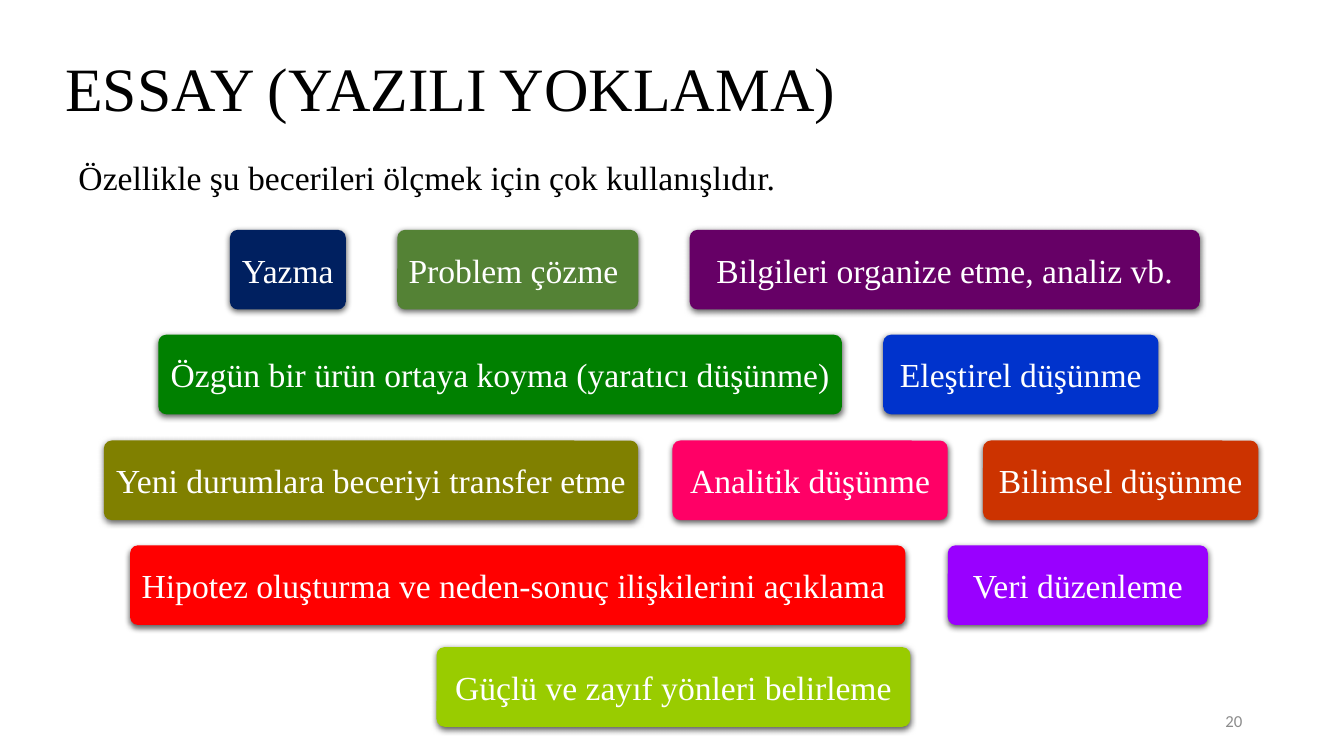
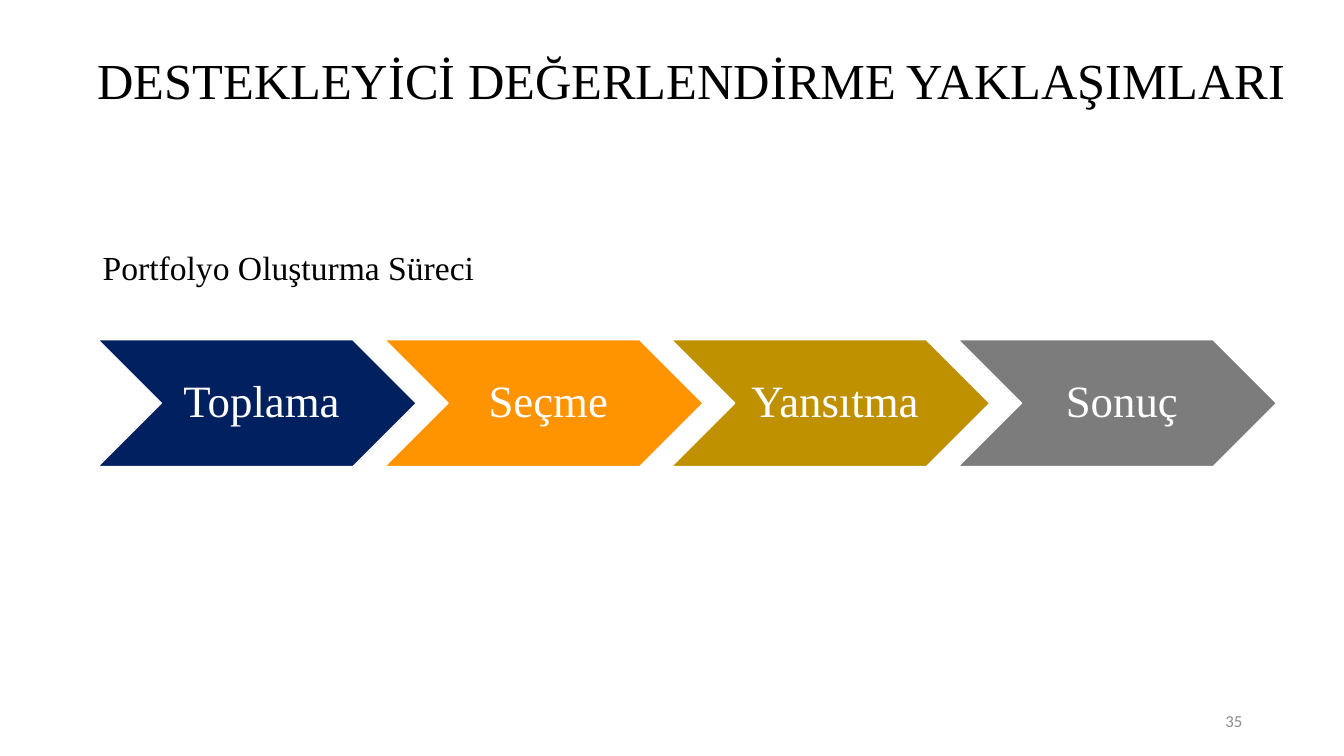
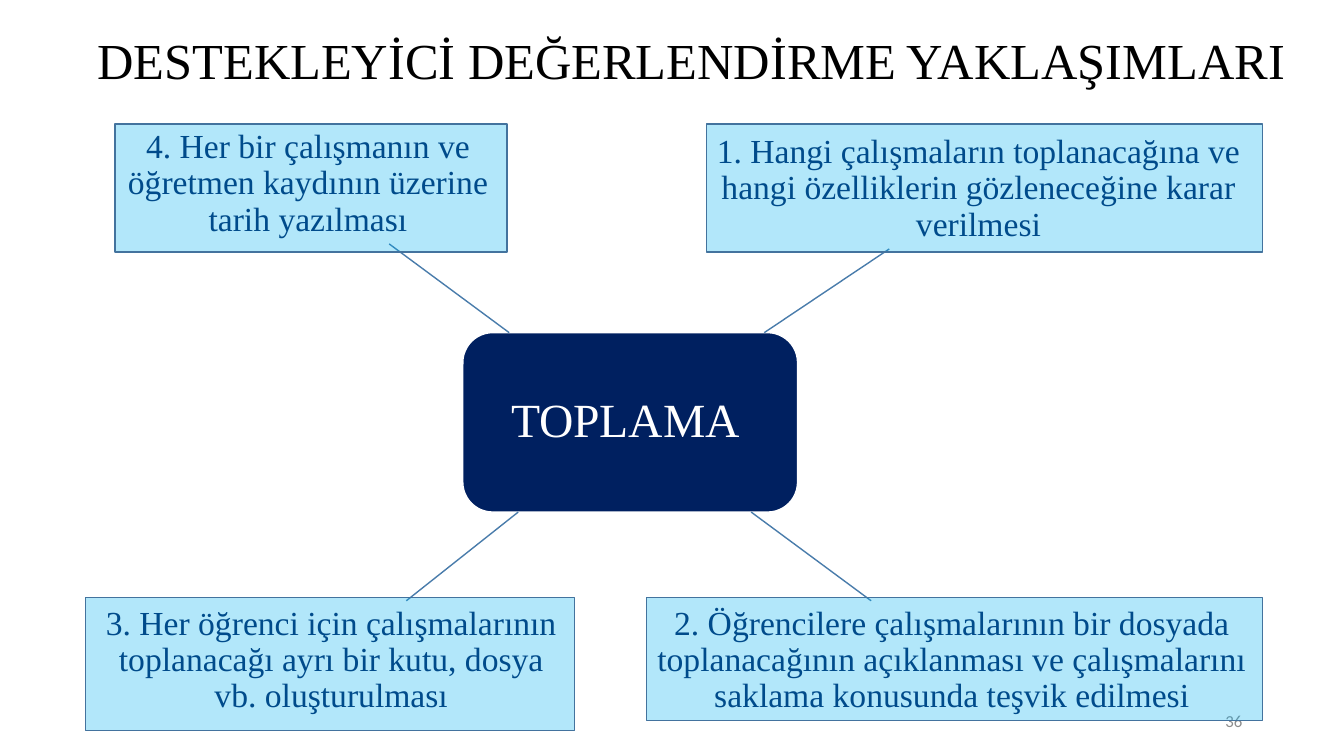
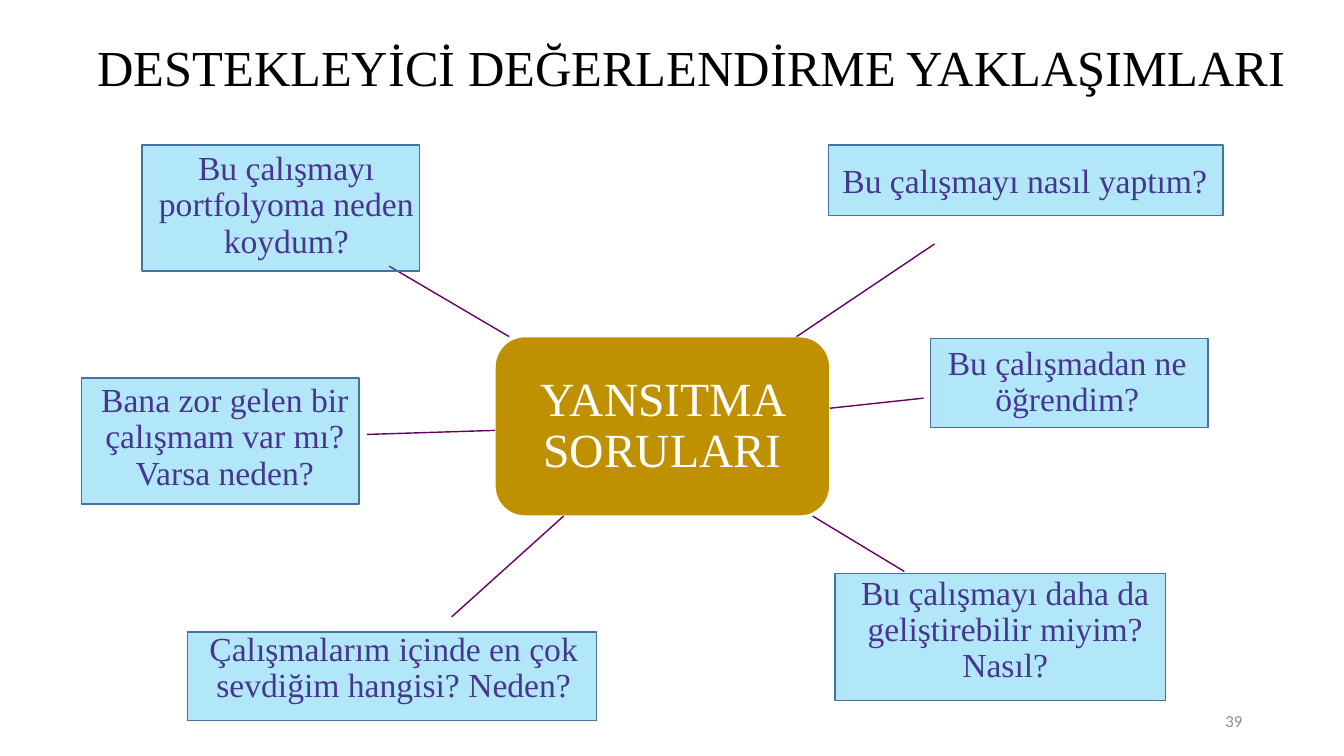
from dataclasses import dataclass

from lxml import etree
from pptx import Presentation
from pptx.dml.color import RGBColor
from pptx.enum.shapes import MSO_CONNECTOR as Line, MSO_SHAPE as Shape
from pptx.enum.text import MSO_ANCHOR as Anchor, PP_ALIGN as Align
from pptx.oxml.ns import qn
from pptx.util import Inches, Pt


@dataclass(frozen=True)
class Theme:
    serif: str = "Times New Roman"
    sans: str = "Calibri"
    black: str = "000000"
    white: str = "FFFFFF"
    grey: str = "8C8C8C"
    navy: str = "002060"
    gold: str = "BF9000"
    purple: str = "660066"
    blue_line: str = "497CAB"
    frame_fill: str = "00B0F0"
    frame_line: str = "43739E"
    frame_opacity: int = 30
    shadow_opacity: int = 63
    title: int = 44
    long_title: int = 36
    hub: int = 34
    step: int = 32
    body: int = 24
    number: int = 12


THEME = Theme()

# Content; boxes are left, top, width, height in inches
APPROACHES = "DESTEKLEYİCİ DEĞERLENDİRME YAKLAŞIMLARI"

CHIP_HEIGHT = 0.79
SKILL_ROWS = [  # row top, then text, left, width, colour
    (2.28, [("Yazma ", 2.28, 1.15, THEME.navy),
            ("Problem çözme ", 3.94, 2.39, "548235"),
            ("Bilgileri organize etme, analiz vb.", 6.84, 5.06, THEME.purple)]),
    (3.32, [("Özgün bir ürün ortaya koyma (yaratıcı düşünme)", 1.57, 6.78, "008000"),
            ("Eleştirel düşünme", 8.76, 2.73, "0033CC")]),
    (4.37, [("Yeni durumlara beceriyi transfer etme", 1.03, 5.3, "808000"),
            ("Analitik düşünme", 6.67, 2.73, "FF0066"),
            ("Bilimsel düşünme", 9.75, 2.73, "CC3300")]),
    (5.41, [("Hipotez oluşturma ve neden-sonuç ilişkilerini açıklama ", 1.29, 7.69, "FF0000"),
            ("Veri düzenleme", 9.4, 2.58, "9900FF")]),
    (6.42, [("Güçlü ve zayıf yönleri belirleme", 4.33, 4.7, "99CC00")]),
]

STEPS = [("Toplama", THEME.navy), ("Seçme", "FF9300"),
         ("Yansıtma", THEME.gold), ("Sonuç", "7C7C7C")]

MAPS = [
    dict(
        number="36", title_top=0.13, hub="TOPLAMA ", hub_at=(4.59, 3.3),
        fill=THEME.navy, ink=THEME.navy, line=THEME.blue_line,
        spokes=[  # text, text box, line ends, frame
            ("1. Hangi çalışmaların toplanacağına ve hangi özelliklerin gözleneceğine karar verilmesi",
             (7.03, 1.34, 5.35, 1.07), (7.58, 3.3, 8.82, 2.47), (7.01, 1.23, 5.51, 1.27)),
            ("2. Öğrencilere çalışmalarının bir dosyada toplanacağının açıklanması ve "
             "çalışmalarını saklama konusunda teşvik edilmesi",
             (6.42, 6.02, 6.04, 1.07), (7.45, 5.08, 8.64, 5.96), (6.41, 5.93, 6.11, 1.22)),
            ("3. Her öğrenci için çalışmalarının toplanacağı ayrı bir kutu, dosya vb. oluşturulması",
             (0.87, 6.02, 4.83, 1.07), (5.14, 5.08, 4.03, 5.96), (0.85, 5.93, 4.85, 1.32)),
            ("4. Her bir çalışmanın ve öğretmen kaydının üzerine tarih yazılması",
             (0.87, 1.29, 4.37, 1.07), (5.05, 3.3, 3.86, 2.42), (1.14, 1.23, 3.89, 1.27)),
        ],
    ),
    dict(
        number="39", title_top=0.2, hub="YANSITMA SORULARI", hub_at=(4.91, 3.34),
        fill=THEME.gold, ink=THEME.purple, line=THEME.purple,
        spokes=[
            ("Bu çalışmayı nasıl yaptım?",
             (8.11, 1.28, 4.11, 1.07), (7.9, 3.34, 9.27, 2.42), (8.22, 1.44, 3.91, 0.7)),
            ("Bu çalışmadan ne öğrendim?",
             (9.22, 3.26, 2.73, 1.07), (8.23, 4.05, 9.16, 3.95), (9.23, 3.36, 2.75, 0.88)),
            ("Bu çalışmayı daha da geliştirebilir miyim? Nasıl?",
             (8.1, 5.72, 3.74, 1.07), (8.06, 5.12, 8.97, 5.67), (8.28, 5.69, 3.28, 1.26)),
            ("Çalışmalarım içinde en çok sevdiğim hangisi? Neden?",
             (1.65, 6.17, 4.51, 0.93), (5.59, 5.12, 4.48, 6.12), (1.86, 6.27, 4.06, 0.88)),
            ("Bana zor gelen bir çalışmam var mı? Varsa neden?",
             (0.88, 3.81, 2.7, 1.07), (4.91, 4.27, 3.64, 4.31), (0.81, 3.75, 2.75, 1.25)),
            ("Bu çalışmayı portfolyoma neden koydum?",
             (1.16, 1.51, 3.36, 1.07), (5.05, 3.34, 3.86, 2.64), (1.41, 1.44, 2.75, 1.25)),
        ],
    ),
]


# Drawing helpers
def inches(values):
    return [Inches(value) for value in values]


def rgb(code):
    return RGBColor.from_string(code)


def write(shape, text, size, color, align=Align.CENTER, spacing=0.9,
          anchor=Anchor.MIDDLE, insets=(0.1, 0.05, 0.1, 0.05), font=THEME.serif):
    frame = shape.text_frame
    frame.word_wrap = True
    frame.vertical_anchor = anchor
    (frame.margin_left, frame.margin_top,
     frame.margin_right, frame.margin_bottom) = inches(insets)
    para = frame.paragraphs[0]
    para.alignment = align
    para.line_spacing = spacing
    span = para.add_run()
    span.text = text
    span.font.name = font
    span.font.size = Pt(size)
    span.font.color.rgb = rgb(color)


def add_text(page, at, text, size, color, **style):
    write(page.shapes.add_textbox(*inches(at)), text, size, color, **style)


def add_block(page, kind, at, fill, line=None):
    block = page.shapes.add_shape(kind, *inches(at))
    block.shadow.inherit = False
    block.fill.solid()
    block.fill.fore_color.rgb = rgb(fill)
    if line:
        block.line.color.rgb = rgb(line)
        block.line.width = Pt(1)
    else:
        block.line.fill.background()
    return block


def set_opacity(color_element, percent):
    etree.SubElement(color_element, qn("a:alpha"), val=str(percent * 1000))


def add_drop_shadow(block):
    effects = block._element.spPr.find(qn("a:effectLst"))
    shadow = etree.SubElement(effects, qn("a:outerShdw"), blurRad=str(Pt(4.5)),
                              dist=str(Pt(1.5)), dir="5400000", rotWithShape="0")
    color = etree.SubElement(shadow, qn("a:srgbClr"), val=THEME.black)
    set_opacity(color, THEME.shadow_opacity)


def add_line(page, ends, color):
    line = page.shapes.add_connector(Line.STRAIGHT, *inches(ends))
    line.line.color.rgb = rgb(color)
    line.line.width = Pt(1)
    etree.SubElement(line._element.spPr, qn("a:effectLst"))


def add_page(deck, number):
    page = deck.slides.add_slide(deck.slide_layouts[6])
    add_text(page, (9.42, 6.95, 3, 0.4), number, THEME.number, THEME.grey,
             align=Align.RIGHT, spacing=1, font=THEME.sans)
    return page


def add_long_title(page, top):
    add_text(page, (0.48, top, 12.37, 0.99), APPROACHES, THEME.long_title,
             THEME.black, align=Align.RIGHT)


# Slides
def add_skills_page(deck):
    page = add_page(deck, "20")
    add_text(page, (0.55, 0.41, 11.98, 0.99), "ESSAY (YAZILI YOKLAMA)",
             THEME.title, THEME.black, align=Align.LEFT)
    add_text(page, (0.68, 1.31, 11.98, 0.9),
             "Özellikle şu becerileri ölçmek için çok kullanışlıdır.", THEME.body,
             THEME.black, align=Align.LEFT, spacing=1.5, anchor=Anchor.TOP)
    for top, chips in SKILL_ROWS:
        for text, left, width, color in chips:
            chip = add_block(page, Shape.ROUNDED_RECTANGLE,
                             (left, top, width, CHIP_HEIGHT), color)
            chip.adjustments[0] = 0.1
            add_drop_shadow(chip)
            write(chip, text, THEME.body, THEME.white, spacing=1, insets=[0.07] * 4)


def add_process_page(deck):
    page = add_page(deck, "35")
    add_long_title(page, 0.33)
    add_text(page, (0.92, 2, 11.5, 4.76), "Portfolyo Oluşturma Süreci", THEME.body,
             THEME.black, align=Align.LEFT, spacing=2.0, anchor=Anchor.TOP)
    width, height = 3.16, 1.26
    for index, (text, color) in enumerate(STEPS):
        left = 0.97 + index * width * 0.9
        step = add_block(page, Shape.CHEVRON, (left, 3.37, width, height),
                         color, THEME.white)
        write(step, text, THEME.step, THEME.white, insets=(0.14, 0.05, 0.05, 0.05))


def add_map_page(deck, content):
    page = add_page(deck, content["number"])
    add_long_title(page, content["title_top"])
    hub = add_block(page, Shape.ROUNDED_RECTANGLE, (*content["hub_at"], 3.32, 1.78),
                    content["fill"], THEME.white)
    write(hub, content["hub"], THEME.hub, THEME.white, insets=[0.09] * 4)
    for text, text_at, ends, _ in content["spokes"]:
        add_line(page, ends, content["line"])
        add_text(page, text_at, text, THEME.body, content["ink"], insets=[0.07] * 4)
    # Translucent frames tint the text below them
    for *_, frame_at in content["spokes"]:
        frame = add_block(page, Shape.RECTANGLE, frame_at,
                          THEME.frame_fill, THEME.frame_line)
        fill = frame._element.spPr.find(qn("a:solidFill"))
        set_opacity(fill[0], THEME.frame_opacity)


def main():
    deck = Presentation()
    deck.slide_width, deck.slide_height = inches((13.33, 7.5))
    add_skills_page(deck)
    add_process_page(deck)
    for content in MAPS:
        add_map_page(deck, content)
    deck.save("out.pptx")


if __name__ == "__main__":
    main()
